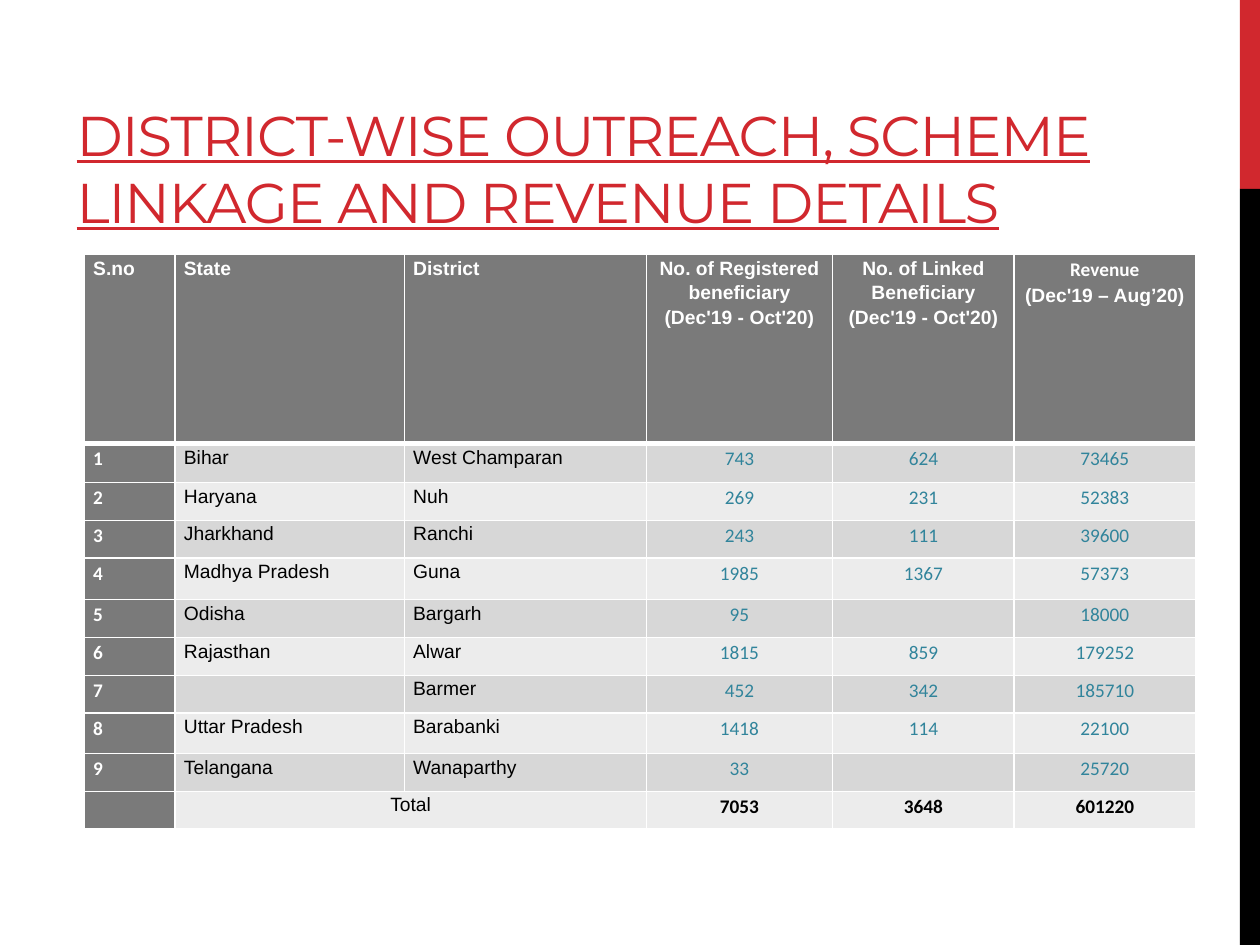
"""Build the slide on district-wise outreach, scheme linkage and revenue."""
import pptx
import pptx.dml.color
import pptx.enum.shapes
import pptx.enum.text
import pptx.oxml
import pptx.oxml.ns
import pptx.util

Inches = pptx.util.Inches
Pt = pptx.util.Pt
RGBColor = pptx.dml.color.RGBColor
LEFT = pptx.enum.text.PP_ALIGN.LEFT
CENTER = pptx.enum.text.PP_ALIGN.CENTER

COLORS = {
    "red": "D1282E",
    "black": "000000",
    "white": "FFFFFF",
    "gray": "7A7A7A",
    "dark_band": "D7D7D7",
    "light_band": "ECECEC",
    "teal": "31849B",
}


def write_text(paragraph, text, *, font="Arial", size=11, color="black", bold=False,
               underline=False, align=LEFT, line_spacing=1.15, tracking=None):
    paragraph.alignment = align
    paragraph.line_spacing = line_spacing
    run = paragraph.add_run()
    run.text = text
    run.font.name = font
    run.font.size = Pt(size)
    run.font.bold = bold
    run.font.underline = underline
    run.font.color.rgb = RGBColor.from_string(COLORS[color])
    if tracking is not None:
        run.font._element.set("spc", str(round(tracking * 100)))


def style_cell(cell, fill, bottom_width=1):
    cell.margin_left = cell.margin_right = Inches(0.07)
    cell.margin_top = cell.margin_bottom = 0
    properties = cell._tc.get_or_add_tcPr()
    for side, width in (("L", 1), ("R", 1), ("T", 1), ("B", bottom_width)):
        properties.append(pptx.oxml.parse_xml(
            f'<a:ln{side} {pptx.oxml.ns.nsdecls("a")} w="{Pt(width)}"><a:solidFill>'
            f'<a:srgbClr val="{COLORS["white"]}"/></a:solidFill></a:ln{side}>'
        ))
    cell.fill.solid()
    cell.fill.fore_color.rgb = RGBColor.from_string(COLORS[fill])


presentation = pptx.Presentation()
presentation.slide_width = Inches(10)
presentation.slide_height = Inches(7.5)
slide = presentation.slides.add_slide(presentation.slide_layouts[6])

for top, height, color in ((0, 1.5, "red"), (1.5, 6, "black")):
    side_bar = slide.shapes.add_shape(
        pptx.enum.shapes.MSO_SHAPE.RECTANGLE,
        Inches(9.84), Inches(top), Inches(0.16), Inches(height),
    )
    side_bar.shadow.inherit = False
    side_bar.fill.solid()
    side_bar.fill.fore_color.rgb = RGBColor.from_string(COLORS[color])
    side_bar.line.fill.background()

title = slide.shapes.add_textbox(Inches(0.51), Inches(0.29), Inches(8.99), Inches(1.62))
title.text_frame.word_wrap = True
title.text_frame.vertical_anchor = pptx.enum.text.MSO_ANCHOR.BOTTOM
write_text(
    title.text_frame.paragraphs[0],
    "DISTRICT-WISE OUTREACH, SCHEME LINKAGE AND REVENUE DETAILS",
    font="Montserrat", size=32, color="red", underline=True, line_spacing=1.0, tracking=-0.6,
)

headers = [
    "S.no",
    "State",
    "District",
    "No. of Registered beneficiary (Dec'19 - Oct'20)",
    "No. of Linked Beneficiary (Dec'19 - Oct'20)",
    "Revenue",
]
districts = [
    ("Bihar", "West Champaran", "743", "624", "73465"),
    ("Haryana", "Nuh", "269", "231", "52383"),
    ("Jharkhand", "Ranchi", "243", "111", "39600"),
    ("Madhya Pradesh", "Guna", "1985", "1367", "57373"),
    ("Odisha", "Bargarh", "95", "", "18000"),
    ("Rajasthan", "Alwar", "1815", "859", "179252"),
    ("", "Barmer", "452", "342", "185710"),
    ("Uttar Pradesh", "Barabanki", "1418", "114", "22100"),
    ("Telangana", "Wanaparthy", "33", "", "25720"),
]
totals = ("", "Total", "", "7053", "3648", "601220")
body = [(str(number), *district) for number, district in enumerate(districts, 1)] + [totals]
column_widths = [0.72, 1.82, 1.92, 1.48, 1.44, 1.44]
row_heights = [1.5, 0.31, 0.3, 0.3, 0.33, 0.3, 0.3, 0.3, 0.32, 0.3, 0.3]

table = slide.shapes.add_table(
    len(row_heights), len(column_widths),
    Inches(0.67), Inches(2.02), Inches(sum(column_widths)), Inches(sum(row_heights)),
).table
table.first_row = False
table.horz_banding = False
for column, width in zip(table.columns, column_widths):
    column.width = Inches(width)
for row, height in zip(table.rows, row_heights):
    row.height = Inches(height)

for column_index, header in enumerate(headers):
    cell = table.cell(0, column_index)
    style_cell(cell, "gray", bottom_width=3)
    write_text(
        cell.text_frame.paragraphs[0], header, color="white", bold=True,
        font="Calibri" if header == "Revenue" else "Arial",
        align=CENTER if column_index >= 3 else LEFT,
    )
write_text(
    table.cell(0, 5).text_frame.add_paragraph(), "(Dec'19 – Aug’20)",
    color="white", bold=True, align=CENTER,
)

total_row = len(body)
table.cell(total_row, 1).merge(table.cell(total_row, 2))
for row_index, values in enumerate(body, 1):
    is_total = row_index == total_row
    band = "dark_band" if row_index % 2 else "light_band"
    for column_index, value in enumerate(values):
        cell = table.cell(row_index, column_index)
        is_number = column_index >= 3
        if column_index == 0:
            color = "white"
        else:
            color = "teal" if is_number and not is_total else "black"
        style_cell(cell, "gray" if column_index == 0 else band)
        write_text(
            cell.text_frame.paragraphs[0], value, color=color,
            font="Arial" if column_index in (1, 2) else "Calibri",
            bold=column_index == 0 or (is_total and is_number),
            align=CENTER if is_number or is_total else LEFT,
        )

presentation.save("out.pptx")
